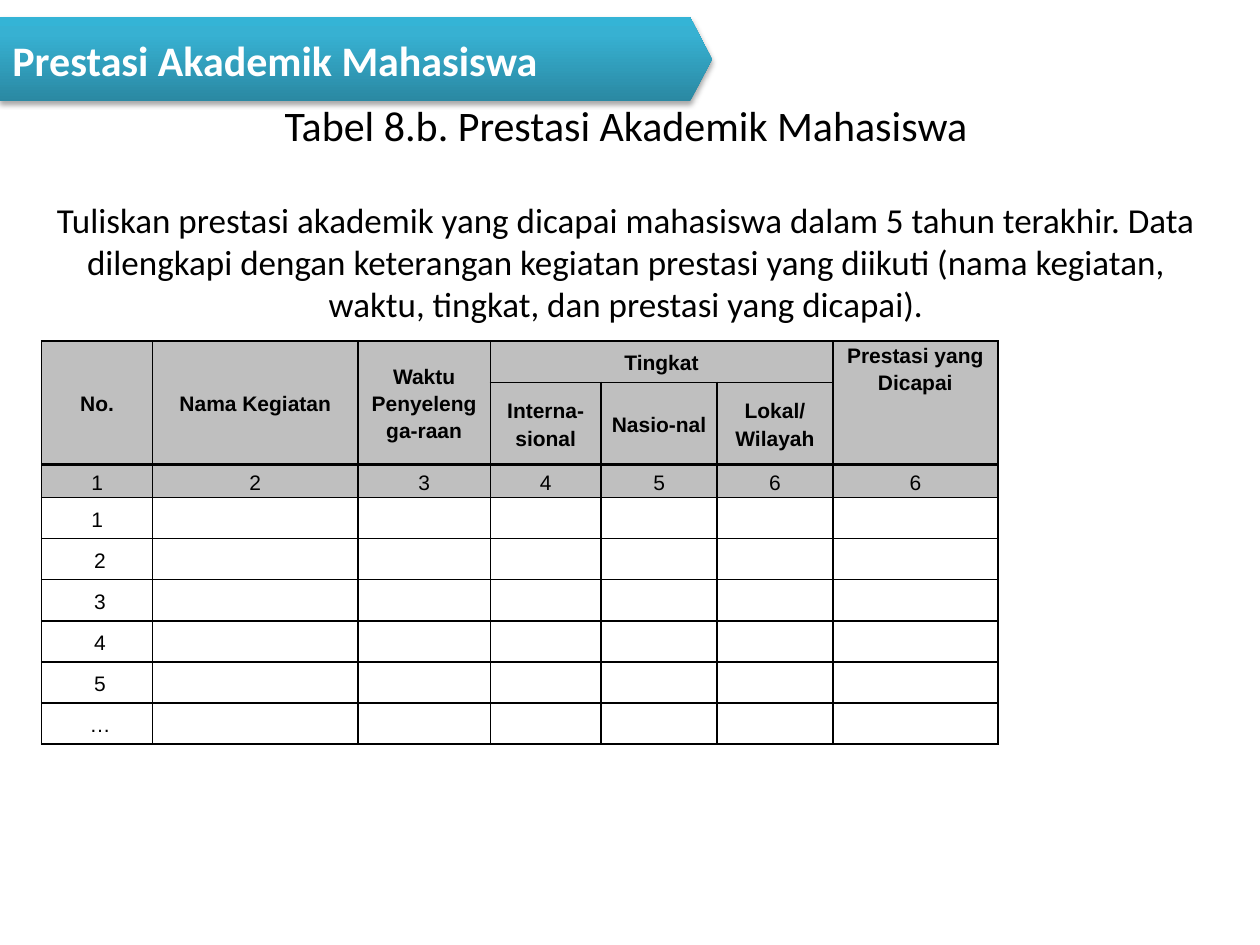
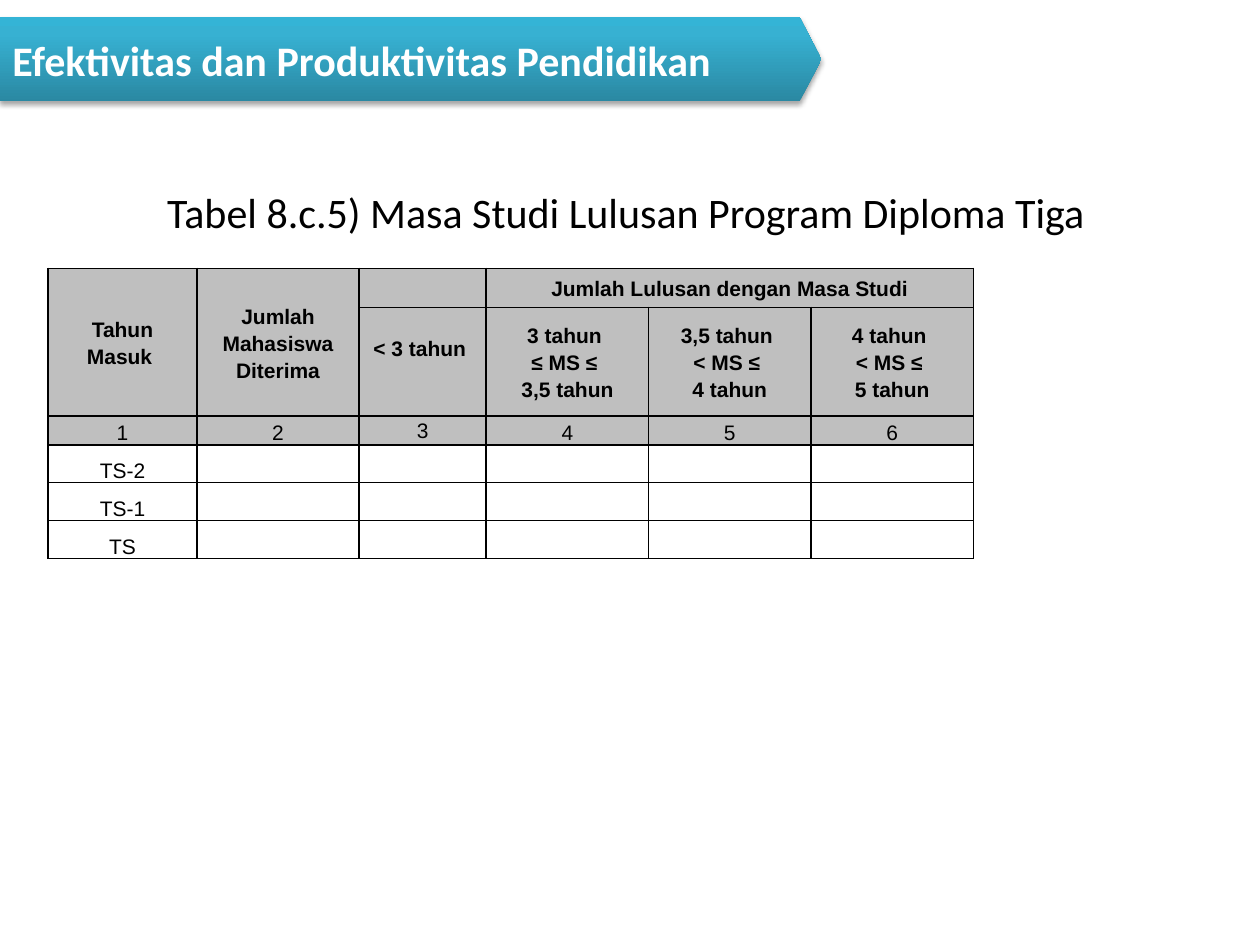
"""Build two slides of academic achievement and study-period tables."""
from dataclasses import dataclass

from pptx import Presentation
from pptx.dml.color import RGBColor
from pptx.enum.shapes import MSO_SHAPE
from pptx.enum.text import MSO_ANCHOR, MSO_AUTO_SIZE, PP_ALIGN
from pptx.oxml import parse_xml
from pptx.oxml.ns import nsdecls, qn
from pptx.util import Pt


@dataclass(frozen=True)
class Theme:
    heading_font: str = "Calibri"
    table_font: str = "Arial"
    black: str = "000000"
    white: str = "FFFFFF"
    header_fill: str = "BFBFBF"
    banner_stops: tuple = ((0, "2A88A2"), (80, "37B1D2"), (100, "34B4D6"))
    heading_size: float = 24
    note_size: float = 20
    table_size: float = 12
    thin: float = 1
    thick: float = 1.5


THEME = Theme()
HEADER_ROWS = 2
TITLE_BOX = (15, 88.5, 685.5, 65)
BANNER_TOP, BANNER_HEIGHT = 9.8, 48.2
MIDDLE, TOP, BOTTOM = MSO_ANCHOR.MIDDLE, MSO_ANCHOR.TOP, MSO_ANCHOR.BOTTOM

SLIDES = [
    {
        "banner": "Prestasi Akademik Mahasiswa",
        "banner_width": 406.8,
        "title": "Tabel 8.b. Prestasi Akademik Mahasiswa",
        "note": "Tuliskan prestasi akademik yang dicapai mahasiswa dalam 5 tahun terakhir. "
                "Data dilengkapi dengan keterangan kegiatan prestasi yang diikuti "
                "(nama kegiatan, waktu, tingkat, dan prestasi yang dicapai).",
        "position": (23.8, 195),
        "columns": [63.4, 117.4, 75.6, 63.4, 66.2, 66.2, 94.3],
        "header_heights": [23.5, 46.9, 18.9],
        "body_height": 23.5,
        "header": [
            ["No.", "Nama Kegiatan", "Waktu Penyelengga-raan", "Tingkat", "", "",
             "Prestasi yang Dicapai"],
            ["", "", "", "Interna-sional", "Nasio-nal", "Lokal/ Wilayah", ""],
            ["1", "2", "3", "4", "5", "6", "6"],
        ],
        "labels": ["1", " 2", " 3", " 4", " 5", " …"],
        "tall_columns": [0, 1, 2, 6],
        "wide_columns": (3, 5),
        "label_anchor": MIDDLE,
        "top_cells": [(0, 6)],
        "raised_cells": [],
    },
    {
        "banner": "Efektivitas dan Produktivitas Pendidikan",
        "banner_width": 469.4,
        "title": "Tabel 8.c.5) Masa Studi Lulusan Program Diploma Tiga",
        "note": "",
        "position": (27.5, 153.3),
        "columns": [85, 92.8, 72.6, 92.8, 92.8, 92.8],
        "header_heights": [22.3, 62, 16.6],
        "body_height": 21.7,
        "header": [
            ["Tahun Masuk ", "Jumlah Mahasiswa Diterima", "",
             "Jumlah Lulusan dengan Masa Studi", "", ""],
            ["", "", "< 3 tahun ", "3 tahun \n≤ MS ≤ \n3,5 tahun",
             "3,5 tahun \n< MS ≤ \n4 tahun", "4 tahun \n< MS ≤ \n5 tahun"],
            ["1", "2", "3", "4", "5", "6"],
        ],
        "labels": ["TS-2", "TS-1", "TS"],
        "tall_columns": [0, 1],
        "wide_columns": (3, 5),
        "label_anchor": BOTTOM,
        "top_cells": [(2, 2)],
        "raised_cells": [(1, 2)],
    },
]


def write(text_frame, text, *, size, font, color=THEME.black, bold=False,
          align=PP_ALIGN.CENTER, line_spacing=None, space_before=0, append=False):
    """Write each line of text as one formatted paragraph."""
    for index, line in enumerate(text.split("\n")):
        first = index == 0 and not append
        paragraph = text_frame.paragraphs[0] if first else text_frame.add_paragraph()
        paragraph.alignment = align
        paragraph.space_before = Pt(space_before)
        if line_spacing:
            paragraph.line_spacing = line_spacing
        if not line:
            paragraph._p.get_or_add_endParaRPr().set("sz", str(size * 100))
            continue
        run = paragraph.add_run()
        run.text = line
        run.font.size = Pt(size)
        run.font.name = font
        run.font.bold = bold
        run.font.color.rgb = RGBColor.from_string(color)


def add_title(slide, title, note):
    """Place the title and its optional note."""
    shape = slide.shapes.title
    shape.left, shape.top, shape.width, shape.height = map(Pt, TITLE_BOX)
    frame = shape.text_frame
    frame.auto_size = MSO_AUTO_SIZE.NONE
    frame.word_wrap = True
    frame.vertical_anchor = MIDDLE
    write(frame, title, size=THEME.heading_size, font=THEME.heading_font)
    if note:
        write(frame, note, size=THEME.note_size, font=THEME.heading_font,
              space_before=28, append=True)


def add_banner(slide, text, width):
    """Draw the gradient arrow band with a soft shadow."""
    shape = slide.shapes.add_shape(MSO_SHAPE.PENTAGON, 0, Pt(BANNER_TOP),
                                   Pt(width), Pt(BANNER_HEIGHT))
    shape.adjustments[0] = 0.26
    shape.line.fill.background()
    shape.shadow.inherit = False
    properties = shape._element.spPr
    stops = "".join(f'<a:gs pos="{position * 1000}"><a:srgbClr val="{color}"/></a:gs>'
                    for position, color in THEME.banner_stops)
    properties.insert(2, parse_xml(
        f'<a:gradFill {nsdecls("a")} rotWithShape="1"><a:gsLst>{stops}</a:gsLst>'
        '<a:lin ang="16200000" scaled="0"/></a:gradFill>'))
    properties.find(qn("a:effectLst")).append(parse_xml(
        f'<a:outerShdw {nsdecls("a")} blurRad="{Pt(3.1)}" dist="{Pt(1.8)}" dir="5400000" '
        f'rotWithShape="0"><a:srgbClr val="{THEME.black}"><a:alpha val="35000"/>'
        '</a:srgbClr></a:outerShdw>'))
    shape.text_frame.word_wrap = True
    shape.text_frame.vertical_anchor = MIDDLE
    write(shape.text_frame, text, size=THEME.heading_size, font=THEME.heading_font,
          color=THEME.white, bold=True, align=PP_ALIGN.LEFT)


def set_borders(cell, top, bottom):
    """Outline a cell with the given top and bottom widths."""
    properties = cell._tc.get_or_add_tcPr()
    for side, width in (("L", THEME.thin), ("R", THEME.thin), ("T", top), ("B", bottom)):
        properties.append(parse_xml(
            f'<a:ln{side} {nsdecls("a")} w="{Pt(width)}"><a:solidFill>'
            f'<a:srgbClr val="{THEME.black}"/></a:solidFill></a:ln{side}>'))


def add_table(slide, content):
    """Build the table with merged headers and empty entry rows."""
    header, columns = content["header"], content["columns"]
    rows = header + [[label] + [""] * (len(columns) - 1) for label in content["labels"]]
    heights = content["header_heights"] + [content["body_height"]] * len(content["labels"])
    left, top = content["position"]
    table = slide.shapes.add_table(len(rows), len(columns), Pt(left), Pt(top),
                                   Pt(sum(columns)), Pt(sum(heights))).table
    table.first_row = table.horz_banding = False
    for column, width in zip(table.columns, columns):
        column.width = Pt(width)
    for row, height in zip(table.rows, heights):
        row.height = Pt(height)
    for column in content["tall_columns"]:
        table.cell(0, column).merge(table.cell(HEADER_ROWS - 1, column))
    first, last = content["wide_columns"]
    table.cell(0, first).merge(table.cell(0, last))

    for row, texts in enumerate(rows):
        for column, text in enumerate(texts):
            cell = table.cell(row, column)
            ends_header = row + cell.span_height == HEADER_ROWS
            set_borders(cell, THEME.thick if row == HEADER_ROWS else THEME.thin,
                        THEME.thick if ends_header else THEME.thin)
            if row < len(header):
                cell.fill.solid()
                cell.fill.fore_color.rgb = RGBColor.from_string(THEME.header_fill)
            else:
                cell.fill.background()
            cell.margin_left = cell.margin_right = Pt(5)
            cell.margin_top = 0
            cell.margin_bottom = Pt(16 if (row, column) in content["raised_cells"] else 0)
            anchor = MIDDLE if row < HEADER_ROWS else content["label_anchor"]
            cell.vertical_anchor = TOP if (row, column) in content["top_cells"] else anchor
            if not cell.is_spanned:
                write(cell.text_frame, text, size=THEME.table_size, font=THEME.table_font,
                      bold=row < HEADER_ROWS, line_spacing=1.15)


def main():
    """Create and save the presentation."""
    presentation = Presentation()
    presentation.slide_width, presentation.slide_height = Pt(720), Pt(540)
    for content in SLIDES:
        slide = presentation.slides.add_slide(presentation.slide_layouts[5])
        add_title(slide, content["title"], content["note"])
        add_banner(slide, content["banner"], content["banner_width"])
        add_table(slide, content)
    presentation.save("out.pptx")


if __name__ == "__main__":
    main()
